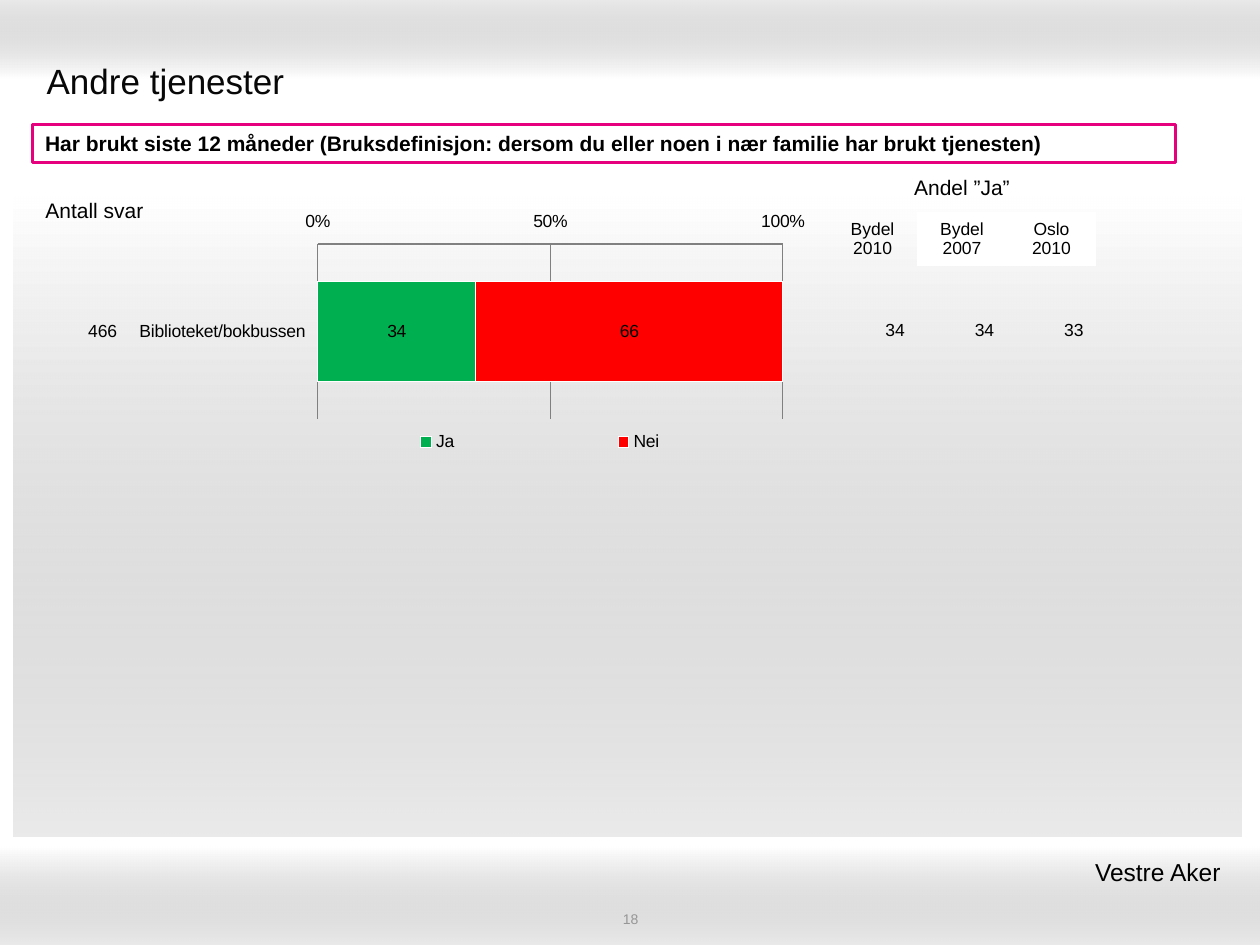
from dataclasses import dataclass
from typing import Optional

from lxml.etree import SubElement
from pptx import Presentation
from pptx.chart.data import CategoryChartData
from pptx.dml.color import RGBColor
from pptx.enum.chart import XL_CHART_TYPE, XL_LEGEND_POSITION, XL_TICK_LABEL_POSITION, XL_TICK_MARK
from pptx.enum.shapes import MSO_SHAPE
from pptx.enum.text import MSO_ANCHOR, PP_ALIGN
from pptx.oxml.ns import qn
from pptx.util import Inches, Pt


@dataclass(frozen=True)
class Theme:
    font: str = "Arial"
    white: str = "FFFFFF"
    shade: str = "999999"
    title: str = "080808"
    text: str = "000000"
    muted: str = "969696"
    accent: str = "E7007E"
    axis: str = "808080"
    yes: str = "00B050"
    no: str = "FF0000"
    title_size: int = 20
    district_size: int = 14
    heading_size: int = 12
    body_size: int = 10
    number_size: int = 8


@dataclass(frozen=True)
class Area:
    left: float
    top: float
    width: float
    height: float

    def lengths(self) -> tuple:
        return tuple(Inches(v) for v in (self.left, self.top, self.width, self.height))


@dataclass(frozen=True)
class Band:
    area: Area
    angle: int


@dataclass(frozen=True)
class Cell:
    text: str
    size: int
    align: PP_ALIGN
    fill: Optional[str] = None
    span: int = 1


@dataclass(frozen=True)
class Grid:
    area: Area
    row_heights: tuple
    rows: tuple


@dataclass(frozen=True)
class Answer:
    name: str
    share: int
    color: str


THEME = Theme()
BODY, HEADING = THEME.body_size, THEME.heading_size
CENTER, RIGHT = PP_ALIGN.CENTER, PP_ALIGN.RIGHT
NO_STYLE = "{2D5ABB26-0587-4C30-8999-92F81FD0307C}"

BANDS = (
    Band(Area(0, 0, 10, 0.62), 90),
    Band(Area(0, 6.72, 10, 0.78), 270),
    Band(Area(0.11, 1.56, 9.74, 5.08), 270),
)

GRIDS = (
    Grid(Area(6.57, 2.36, 2.13, 0.53), (0.53,),
         (tuple(Cell(share, BODY, RIGHT) for share in ("34", "34", "33")),)),
    Grid(Area(6.57, 1.31, 2.13, 0.8), (0.37, 0.43), (
        (Cell("Andel ”Ja”", HEADING, CENTER, span=3),),
        (Cell("Bydel\n2010", BODY, CENTER),
         Cell("Bydel\n2007", BODY, CENTER, THEME.white),
         Cell("Oslo\n2010", BODY, CENTER, THEME.white)),
    )),
    Grid(Area(0.51, 2.37, 0.52, 0.52), (0.52,), ((Cell("466", BODY, RIGHT),),)),
    Grid(Area(0.04, 1.38, 1.42, 0.59), (0.59,), ((Cell("Antall svar", HEADING, CENTER),),)),
)

ANSWERS = (Answer("Ja", 34, THEME.yes), Answer("Nei", 66, THEME.no))


def rgb(color: str) -> RGBColor:
    return RGBColor.from_string(color)


def style_font(font, size: int, color: str = THEME.text, bold: bool = False) -> None:
    font.name, font.size, font.bold = THEME.font, Pt(size), bold
    font.color.rgb = rgb(color)


def write(frame, text: str, size: int, align: PP_ALIGN = PP_ALIGN.LEFT,
          color: str = THEME.text, bold: bool = False) -> None:
    frame.word_wrap = True
    frame.text = text
    for para in frame.paragraphs:
        para.alignment = align
        style_font(para.font, size, color, bold)


def add_rectangle(page, area: Area):
    box = page.shapes.add_shape(MSO_SHAPE.RECTANGLE, *area.lengths())
    box.shadow.inherit = False
    return box


def add_band(page, band: Band) -> None:
    box = add_rectangle(page, band.area)
    box.line.fill.background()
    box.fill.gradient()
    box.fill.gradient_angle = band.angle
    for stop, position, color in zip(box.fill.gradient_stops, (0, 1), (THEME.white, THEME.shade)):
        stop.position = position
        stop.color.rgb = rgb(color)
    shade = box._element.xpath(".//a:gs[last()]/a:srgbClr")[0]
    SubElement(shade, qn("a:alpha"), val="20000")
    page.shapes.title._element.addprevious(box._element)


def add_question(page, text: str) -> None:
    box = add_rectangle(page, Area(0.26, 0.99, 9.07, 0.3))
    box.fill.solid()
    box.fill.fore_color.rgb = rgb(THEME.white)
    box.line.color.rgb = rgb(THEME.accent)
    box.line.width = Pt(2)
    box.text_frame.vertical_anchor = MSO_ANCHOR.TOP
    write(box.text_frame, text, HEADING, bold=True)


def add_grid(page, grid: Grid) -> None:
    columns = max(sum(cell.span for cell in row) for row in grid.rows)
    frame = page.shapes.add_table(len(grid.rows), columns, *grid.area.lengths())
    table = frame.table
    table.first_row = table.horz_banding = False
    frame._element.xpath(".//a:tableStyleId")[0].text = NO_STYLE
    for column in table.columns:
        column.width = Inches(grid.area.width / columns)
    for index, (height, row) in enumerate(zip(grid.row_heights, grid.rows)):
        table.rows[index].height = Inches(height)
        for position, item in enumerate(row):
            cell = table.cell(index, position)
            if item.span > 1:
                cell.merge(table.cell(index, position + item.span - 1))
            if item.fill:
                cell.fill.solid()
                cell.fill.fore_color.rgb = rgb(item.fill)
            else:
                cell.fill.background()
            cell.vertical_anchor = MSO_ANCHOR.MIDDLE
            write(cell.text_frame, item.text, item.size, item.align)


def place(element, area: Area, index: int) -> None:
    for previous in element.findall(qn("c:layout")):
        element.remove(previous)
    layout = element.makeelement(qn("c:layout"))
    element.insert(index, layout)
    manual = SubElement(layout, qn("c:manualLayout"))
    if element.tag == qn("c:plotArea"):
        SubElement(manual, qn("c:layoutTarget"), val="inner")
    for name in ("xMode", "yMode"):
        SubElement(manual, qn(f"c:{name}"), val="edge")
    for name, value in zip("xywh", (area.left, area.top, area.width, area.height)):
        SubElement(manual, qn(f"c:{name}"), val=str(value))


def add_answers(page) -> None:
    data = CategoryChartData()
    data.categories = ["Biblioteket/bokbussen"]
    for answer in ANSWERS:
        data.add_series(answer.name, [answer.share])
    area = Area(0.98, 1.63, 5.51, 2.04)
    chart = page.shapes.add_chart(XL_CHART_TYPE.BAR_STACKED, *area.lengths(), data).chart
    style_font(chart.font, BODY)
    chart.has_title = False
    chart.has_legend = True
    chart.legend.position = XL_LEGEND_POSITION.BOTTOM
    chart.legend.include_in_layout = False
    place(chart.legend._element, Area(0.2, 0.86, 0.84, 0.12), 1)
    place(chart._chartSpace.chart.plotArea, Area(0.28, 0.15, 0.67, 0.68), 0)

    plot = chart.plots[0]
    plot.gap_width, plot.overlap, plot.vary_by_categories = 75, 100, False
    for series, answer in zip(plot.series, ANSWERS):
        series.format.fill.solid()
        series.format.fill.fore_color.rgb = rgb(answer.color)
        series.format.line.color.rgb = rgb(THEME.white)
        labels = series.data_labels
        labels.show_value = True
        labels.number_format, labels.number_format_is_linked = "0", False

    categories, values = chart.category_axis, chart.value_axis
    for axis, tick in ((categories, XL_TICK_MARK.NONE), (values, XL_TICK_MARK.INSIDE)):
        axis.major_tick_mark, axis.minor_tick_mark = tick, XL_TICK_MARK.NONE
        axis.tick_label_position = XL_TICK_LABEL_POSITION.LOW
        axis.format.line.color.rgb = rgb(THEME.axis)
    categories.reverse_order = True
    values.minimum_scale, values.maximum_scale, values.major_unit = 0, 100, 50
    values.major_gridlines.format.line.color.rgb = rgb(THEME.axis)
    values.tick_labels.number_format = "General\\%"
    values.tick_labels.number_format_is_linked = False


def main() -> None:
    deck = Presentation()
    deck.slide_width, deck.slide_height = Inches(10), Inches(7.5)
    page = deck.slides.add_slide(deck.slide_layouts[5])
    for band in BANDS:
        add_band(page, band)

    title = page.shapes.title
    title.left, title.top, title.width, title.height = Area(0.27, 0.36, 9.45, 0.55).lengths()
    title.text_frame.vertical_anchor = MSO_ANCHOR.MIDDLE
    write(title.text_frame, "Andre tjenester", THEME.title_size, color=THEME.title)

    number = page.shapes.add_textbox(*Area(3.42, 7.22, 3.17, 0.14).lengths()).text_frame
    number.margin_top = number.margin_bottom = 0
    number.vertical_anchor = MSO_ANCHOR.MIDDLE
    write(number, "18", THEME.number_size, CENTER, THEME.muted)

    add_question(page, "Har brukt siste 12 måneder (Bruksdefinisjon: dersom du eller noen i nær familie har brukt tjenesten)")
    add_answers(page)
    for grid in GRIDS:
        add_grid(page, grid)

    district = page.shapes.add_textbox(*Area(6.1, 6.75, 3.74, 0.34).lengths())
    write(district.text_frame, "Vestre Aker ", THEME.district_size, RIGHT)
    deck.save("out.pptx")


if __name__ == "__main__":
    main()
